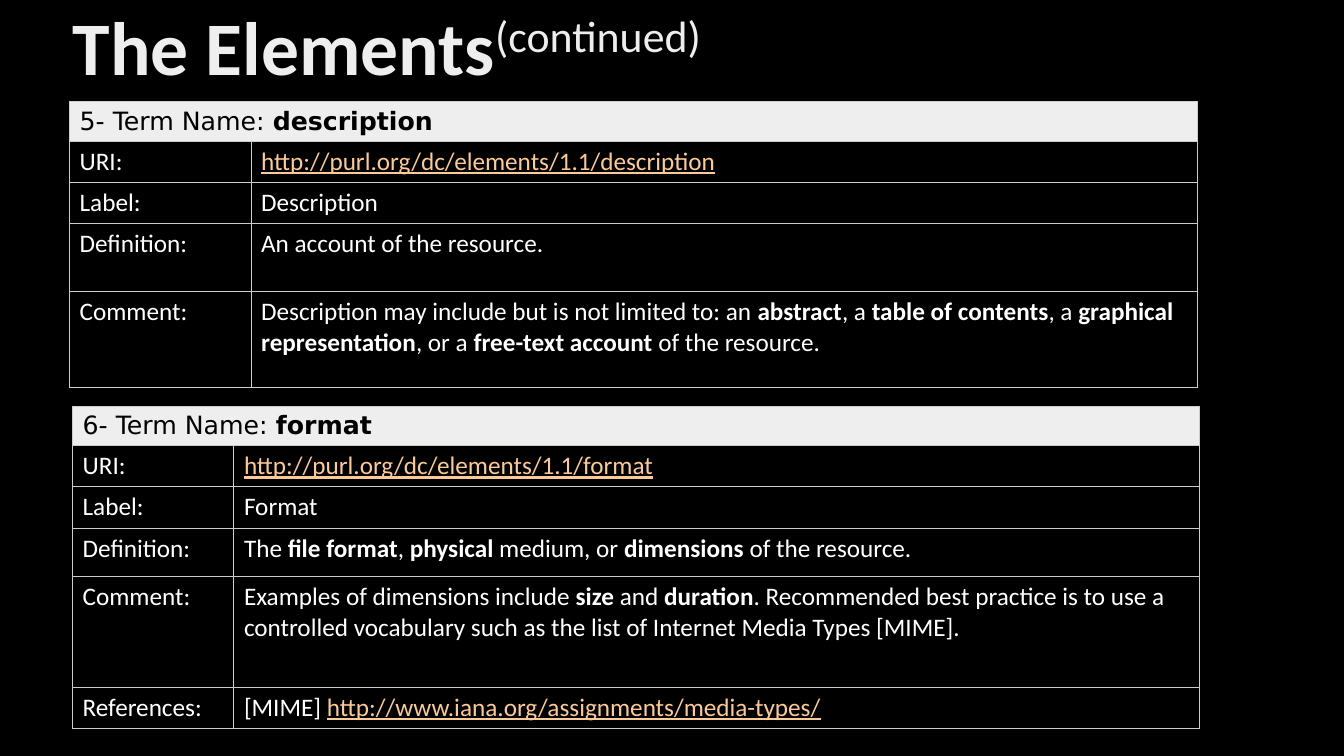
from lxml.etree import SubElement
from pptx import Presentation
from pptx.dml.color import RGBColor
from pptx.enum.text import MSO_ANCHOR, MSO_AUTO_SIZE, PP_ALIGN
from pptx.oxml.ns import qn
from pptx.util import Inches, Pt

BLACK, WHITE, PALE, LINK, BORDER = "000000", "FFFFFF", "EEEEEE", "FBCA98", "CCCCCC"

DESCRIPTION_ROWS = [
    ("URI:", "*http://purl.org/dc/elements/1.1/description"),
    ("Label:", "Description"),
    ("Definition:", "An account of the resource."),
    ("Comment:", "Description may include but is not limited to: an *abstract*, a "
     "*table of contents*, a *graphical representation*, or a "
     "*free-text account *of the resource."),
]
FORMAT_ROWS = [
    ("URI:", "*http://purl.org/dc/elements/1.1/format"),
    ("Label:", "Format"),
    ("Definition:", "The *file format*, *physical* medium, or *dimensions* of the resource."),
    ("Comment:", "Examples of dimensions include *size* and *duration*. Recommended best "
     "practice is to use a controlled vocabulary such as the list of Internet Media "
     "Types [MIME]."),
    ("References:", "[MIME] *http://www.iana.org/assignments/media-types/"),
]


def rgb(color):
    """Turn a hex string into a colour."""
    return RGBColor.from_string(color)


def add_text(paragraph, text, size=18, font="Calibri", color=WHITE, bold=False,
             underline=False):
    """Append a formatted run and return it."""
    run = paragraph.add_run()
    run.text = text
    run.font.size = Pt(size)
    run.font.name = font
    run.font.bold = bold
    run.font.underline = underline
    run.font.color.rgb = rgb(color)
    return run


def add_marked_text(paragraph, text, **text_format):
    """Write text whose starred parts are web addresses or bold words."""
    for index, part in enumerate(text.split("*")):
        if part.startswith("http"):
            add_text(paragraph, part, **{**text_format, "color": LINK, "underline": True})
        elif part:
            add_text(paragraph, part, bold=index % 2 == 1, **text_format)


def set_borders(cell):
    """Draw a thin line on all four sides of a cell."""
    properties = cell._tc.get_or_add_tcPr()
    for side in ("a:lnL", "a:lnR", "a:lnT", "a:lnB"):
        line = SubElement(properties, qn(side), w=str(Pt(0.75)))
        fill = SubElement(line, qn("a:solidFill"))
        SubElement(fill, qn("a:srgbClr"), val=BORDER)


def add_title(slide, text, suffix):
    """Place the slide title with a raised suffix."""
    title = slide.shapes.title
    title.left, title.top = Inches(0.62), Inches(0)
    title.width, title.height = Inches(11.5), Inches(1.01)
    frame = title.text_frame
    frame.word_wrap = True
    frame.auto_size = MSO_AUTO_SIZE.NONE
    frame.vertical_anchor = MSO_ANCHOR.MIDDLE
    paragraph = frame.paragraphs[0]
    paragraph.alignment = PP_ALIGN.LEFT
    paragraph.line_spacing = 0.9
    add_text(paragraph, text, size=54, color=PALE, bold=True)
    raised = add_text(paragraph, suffix, size=54, color=PALE)
    raised.font._element.set("baseline", "30000")


def add_term_table(slide, heading, rows, left, top, widths, heights):
    """Add a term table with a merged heading row."""
    table = slide.shapes.add_table(
        len(heights), len(widths), Inches(left), Inches(top),
        Inches(sum(widths)), Inches(sum(heights))).table
    table.first_row = table.horz_banding = False
    for column, width in zip(table.columns, widths):
        column.width = Inches(width)
    for row, height in zip(table.rows, heights):
        row.height = Inches(height)
    for cell in table.iter_cells():
        set_borders(cell)
        cell.fill.background()
    header = table.cell(0, 0)
    header.merge(table.cell(0, 1))
    header.fill.solid()
    header.fill.fore_color.rgb = rgb(PALE)
    add_marked_text(header.text_frame.paragraphs[0], heading,
                    font="DejaVu Sans", color=BLACK)
    for row_index, texts in enumerate(rows, start=1):
        for column_index, text in enumerate(texts):
            cell = table.cell(row_index, column_index)
            add_marked_text(cell.text_frame.paragraphs[0], text)


def main():
    """Build and save the slide."""
    presentation = Presentation()
    presentation.slide_width, presentation.slide_height = Inches(13.33), Inches(7.5)
    slide = presentation.slides.add_slide(presentation.slide_layouts[5])
    slide.background.fill.solid()
    slide.background.fill.fore_color.rgb = rgb(BLACK)
    add_title(slide, "The Elements", "(continued)")
    add_term_table(slide, "5- Term Name: *description", DESCRIPTION_ROWS, 0.69, 1.01,
                   widths=(1.8, 9.39), heights=(0.39, 0.41, 0.41, 0.67, 0.95))
    add_term_table(slide, "6- Term Name: *format", FORMAT_ROWS, 0.72, 4.03,
                   widths=(1.6, 9.58), heights=(0.39, 0.41, 0.41, 0.48, 1.1, 0.4))
    presentation.save("out.pptx")


if __name__ == "__main__":
    main()
